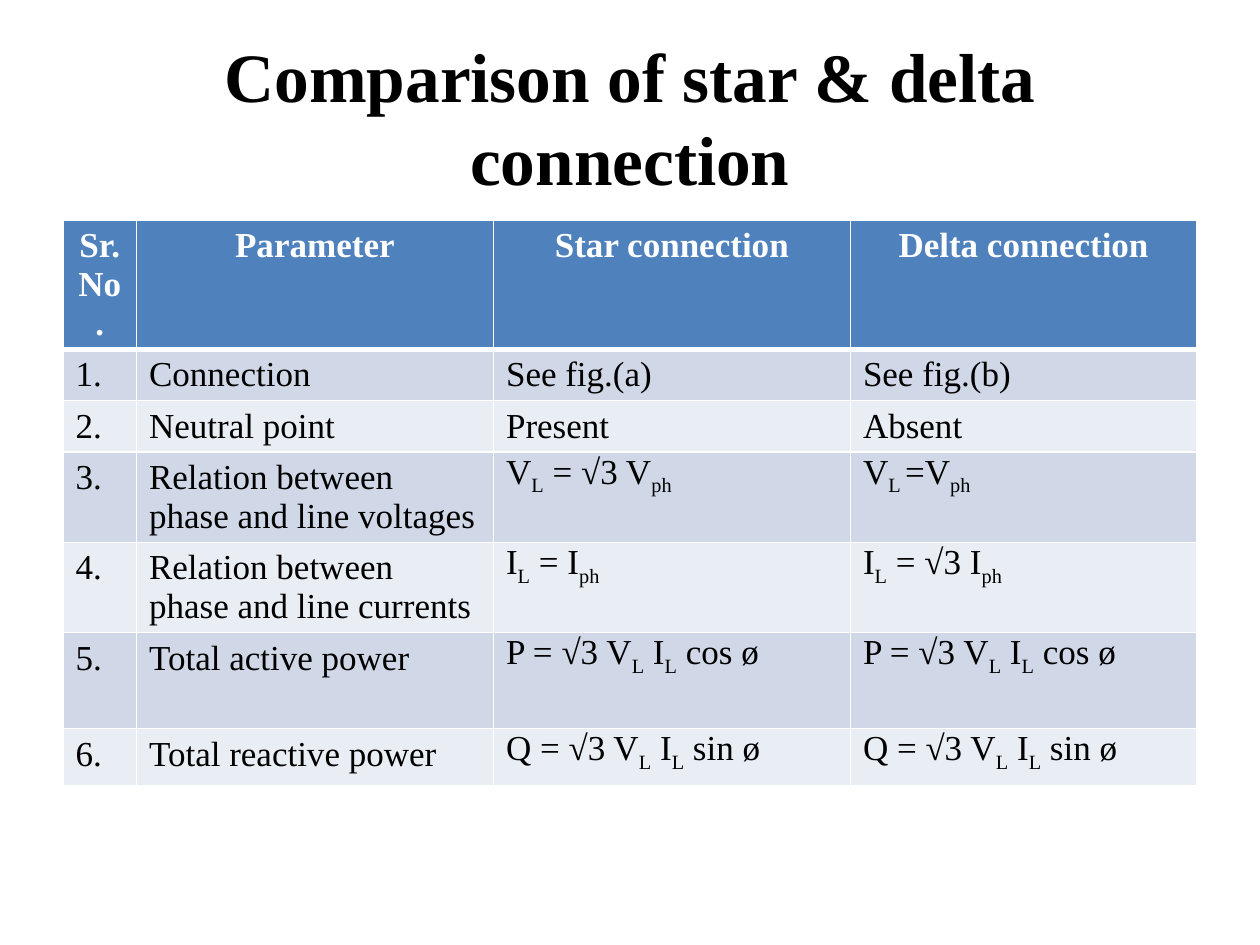
from lxml.etree import SubElement
from pptx import Presentation
from pptx.dml.color import RGBColor
from pptx.enum.text import MSO_ANCHOR, PP_ALIGN
from pptx.oxml.ns import qn
from pptx.util import Pt

FONT = "Times New Roman"
BLACK = RGBColor(0x00, 0x00, 0x00)
WHITE = RGBColor(0xFF, 0xFF, 0xFF)
HEADER_BLUE = RGBColor(0x4F, 0x81, 0xBD)
BANDS = (RGBColor(0xD0, 0xD8, 0xE8), RGBColor(0xE9, 0xED, 0xF4))

COL_WIDTHS = (42, 204, 204, 198)
ROW_HEIGHTS = (73.6, 29.4, 29.4, 51.6, 51.6, 54.8, 32.6)
LINE_HEIGHT = 22.1
ACTIVE_POWER = "P = √3 V{L} I{L} cos ø"
REACTIVE_POWER = "Q = √3 V{L} I{L} sin ø"
# Braces mark subscripts.
ROWS = (
    ("Sr.No.", "Parameter", "Star connection", "Delta connection"),
    ("1.", "Connection", "See fig.(a)", "See fig.(b)"),
    ("2.", "Neutral point", "Present", "Absent"),
    ("3.", "Relation between phase and line voltages",
     "V{L} = √3 V{ph}", "V{L }=V{ph}"),
    ("4.", "Relation between phase and line currents",
     "I{L} = I{ph}", "I{L} = √3 I{ph}"),
    ("5.", "Total active power", ACTIVE_POWER, ACTIVE_POWER),
    ("6.", "Total reactive power", REACTIVE_POWER, REACTIVE_POWER),
)


def style_run(r, size, color, bold):
    r.font.name = FONT
    r.font.size = Pt(size)
    r.font.color.rgb = color
    r.font.bold = bold


def write_formula(p, text, size, color, bold):
    """Write text as runs, lowering the parts in braces."""
    for i, part in enumerate(text.replace("}", "{").split("{")):
        if part:
            r = p.add_run()
            r.text = part
            style_run(r, size, color, bold)
            if i % 2:
                r._r.get_or_add_rPr().set("baseline", "-25000")


def set_borders(cell, top, bottom):
    """Draw white cell borders; they must precede the fill in the XML."""
    tc_pr = cell._tc.get_or_add_tcPr()
    sides = (("lnL", 1), ("lnR", 1), ("lnT", top), ("lnB", bottom))
    for tag, width in sides:
        ln = SubElement(tc_pr, qn(f"a:{tag}"), w=str(Pt(width)))
        fill = SubElement(ln, qn("a:solidFill"))
        SubElement(fill, qn("a:srgbClr"), val=str(WHITE))


def add_title(slide, left, top, width, height):
    s = slide.shapes.add_textbox(Pt(left), Pt(top), Pt(width), Pt(height))
    tf = s.text_frame
    tf.word_wrap = True
    tf.vertical_anchor = MSO_ANCHOR.MIDDLE
    p = tf.paragraphs[0]
    p.text = "Comparison of star & delta connection"
    p.alignment = PP_ALIGN.CENTER
    style_run(p.runs[0], 39.6, BLACK, True)


def add_comparison_table(slide, left, top):
    table = slide.shapes.add_table(
        len(ROWS), len(COL_WIDTHS), Pt(left), Pt(top),
        Pt(sum(COL_WIDTHS)), Pt(sum(ROW_HEIGHTS))).table
    for column, width in zip(table.columns, COL_WIDTHS):
        column.width = Pt(width)
    for i, (row, height, texts) in enumerate(zip(table.rows, ROW_HEIGHTS, ROWS)):
        row.height = Pt(height)
        header = i == 0
        for cell, text in zip(row.cells, texts):
            set_borders(cell, 3 if i == 1 else 1, 3 if header else 1)
            cell.fill.solid()
            cell.fill.fore_color.rgb = HEADER_BLUE if header else BANDS[(i - 1) % 2]
            cell.margin_bottom = 0
            p = cell.text_frame.paragraphs[0]
            p.alignment = PP_ALIGN.CENTER if header else PP_ALIGN.LEFT
            p.line_spacing = Pt(LINE_HEIGHT)
            write_formula(p, text, 20, WHITE if header else BLACK, header)


def main():
    prs = Presentation()
    prs.slide_width, prs.slide_height = Pt(720), Pt(540)
    slide = prs.slides.add_slide(prs.slide_layouts[6])
    add_title(slide, 36, 21.6, 648, 90)
    add_comparison_table(slide, 36, 126)
    prs.save("out.pptx")


if __name__ == "__main__":
    main()
